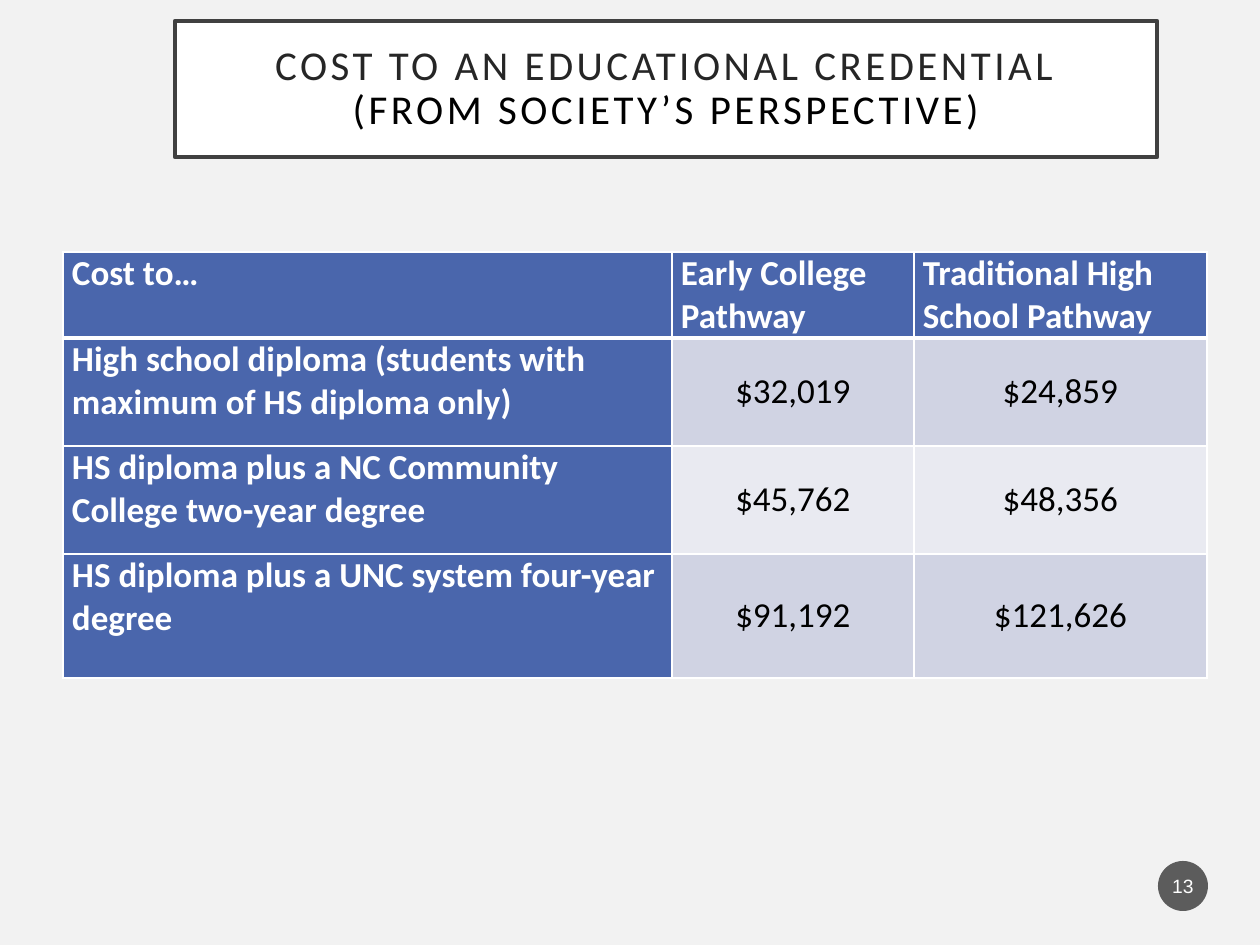
"""Build the slide comparing the cost to society of educational credentials."""
from dataclasses import dataclass

import lxml.etree
import pptx
import pptx.dml.color
import pptx.enum.shapes
import pptx.enum.text
import pptx.oxml.ns
import pptx.util

EMU_PER_PX = 914400 / 126
ALIGN = pptx.enum.text.PP_ALIGN
ANCHOR = pptx.enum.text.MSO_ANCHOR


@dataclass(frozen=True)
class Theme:
    background: str = "F2F2F2"
    white: str = "FFFFFF"
    black: str = "000000"
    title_ink: str = "262626"
    title_border: str = "404040"
    header: str = "4A66AC"
    bands: tuple = ("D0D3E3", "E9EAF1")
    badge: str = "1D1D1D"
    font: str = "Calibri"
    badge_font: str = "Arial"
    title_size: float = 23.4
    table_size: int = 20
    badge_size: int = 11


THEME = Theme()
TITLE = (
    ("COST TO AN EDUCATIONAL CREDENTIAL", THEME.title_ink),
    ("(FROM SOCIETY’S PERSPECTIVE)", THEME.black),
)
COSTS = (
    ("Cost to…", "Early College Pathway", "Traditional High School Pathway"),
    ("High school diploma (students with maximum of HS diploma only)", "$32,019", "$24,859"),
    ("HS diploma plus a NC Community College two-year degree", "$45,762", "$48,356"),
    ("HS diploma plus a UNC system four-year degree", "$91,192", "$121,626"),
)
COLUMN_WIDTHS = (609, 242, 293)
ROW_HEIGHTS = (86, 108, 108, 124)


def px(length):
    return pptx.util.Emu(round(length * EMU_PER_PX))


def rgb(colour):
    return pptx.dml.color.RGBColor.from_string(colour)


def paint(fill, colour):
    fill.solid()
    fill.fore_color.rgb = rgb(colour)


def add_run(paragraph, text, size, colour, font=THEME.font, bold=False):
    run = paragraph.add_run()
    run.text = text
    run.font.name = font
    run.font.size = pptx.util.Pt(size)
    run.font.bold = bold
    run.font.color.rgb = rgb(colour)
    return run


def set_insets(frame, across, down):
    frame.margin_left = frame.margin_right = px(across)
    frame.margin_top = frame.margin_bottom = px(down)


def add_title(slide):
    title = slide.shapes.title
    title.left, title.top, title.width, title.height = map(px, (175, 21, 982, 136))
    paint(title.fill, THEME.white)
    title.line.color.rgb = rgb(THEME.title_border)
    title.line.width = pptx.util.Pt(2.5)
    frame = title.text_frame
    frame.auto_size = pptx.enum.text.MSO_AUTO_SIZE.NONE
    frame.word_wrap = True
    frame.vertical_anchor = ANCHOR.MIDDLE
    set_insets(frame, 25, 25)
    paragraph = frame.paragraphs[0]
    paragraph.alignment = ALIGN.CENTER
    paragraph.line_spacing = 0.9
    for index, (line, colour) in enumerate(TITLE):
        if index:
            paragraph.add_line_break()
        run = add_run(paragraph, line, THEME.title_size, colour)
        run.font._element.set("spc", "200")


def set_borders(cell, row):
    properties = cell._tc.get_or_add_tcPr()
    points = {"lnL": 1, "lnR": 1, "lnT": 3 if row == 1 else 1, "lnB": 3 if row == 0 else 1}
    for side, width in points.items():
        border = lxml.etree.SubElement(
            properties, pptx.oxml.ns.qn(f"a:{side}"), w=str(pptx.util.Pt(width)))
        solid = lxml.etree.SubElement(border, pptx.oxml.ns.qn("a:solidFill"))
        lxml.etree.SubElement(solid, pptx.oxml.ns.qn("a:srgbClr"), val=THEME.white)


def format_cell(cell, text, row, column):
    heading = row == 0 or column == 0
    set_borders(cell, row)
    paint(cell.fill, THEME.header if heading else THEME.bands[(row - 1) % 2])
    set_insets(cell, 9, 0)
    cell.vertical_anchor = ANCHOR.TOP if heading else ANCHOR.MIDDLE
    paragraph = cell.text_frame.paragraphs[0]
    paragraph.alignment = ALIGN.LEFT if heading else ALIGN.CENTER
    ink = THEME.white if heading else THEME.black
    add_run(paragraph, text, THEME.table_size, ink, bold=heading)


def add_cost_table(slide):
    table = slide.shapes.add_table(
        len(COSTS), len(COSTS[0]), px(63), px(252),
        px(sum(COLUMN_WIDTHS)), px(sum(ROW_HEIGHTS))).table
    table.first_col = True
    for column, width in zip(table.columns, COLUMN_WIDTHS):
        column.width = px(width)
    for row, height in zip(table.rows, ROW_HEIGHTS):
        row.height = px(height)
    for row, texts in enumerate(COSTS):
        for column, text in enumerate(texts):
            format_cell(table.cell(row, column), text, row, column)


def add_page_badge(slide, number):
    badge = slide.shapes.add_shape(
        pptx.enum.shapes.MSO_SHAPE.OVAL, px(1158), px(861), px(50), px(50))
    badge.shadow.inherit = False
    paint(badge.fill, THEME.badge)
    tint = badge._element.spPr.find(".//" + pptx.oxml.ns.qn("a:srgbClr"))
    lxml.etree.SubElement(tint, pptx.oxml.ns.qn("a:alpha"), val="70000")
    badge.line.fill.background()
    frame = badge.text_frame
    frame.vertical_anchor = ANCHOR.MIDDLE
    set_insets(frame, 2, 6)
    paragraph = frame.paragraphs[0]
    paragraph.alignment = ALIGN.CENTER
    add_run(paragraph, number, THEME.badge_size, THEME.white, THEME.badge_font)


def main():
    deck = pptx.Presentation()
    deck.slide_width, deck.slide_height = px(1260), px(945)
    slide = deck.slides.add_slide(deck.slide_layouts[5])
    paint(slide.background.fill, THEME.background)
    add_title(slide)
    add_cost_table(slide)
    add_page_badge(slide, "13")
    deck.save("out.pptx")


if __name__ == "__main__":
    main()
